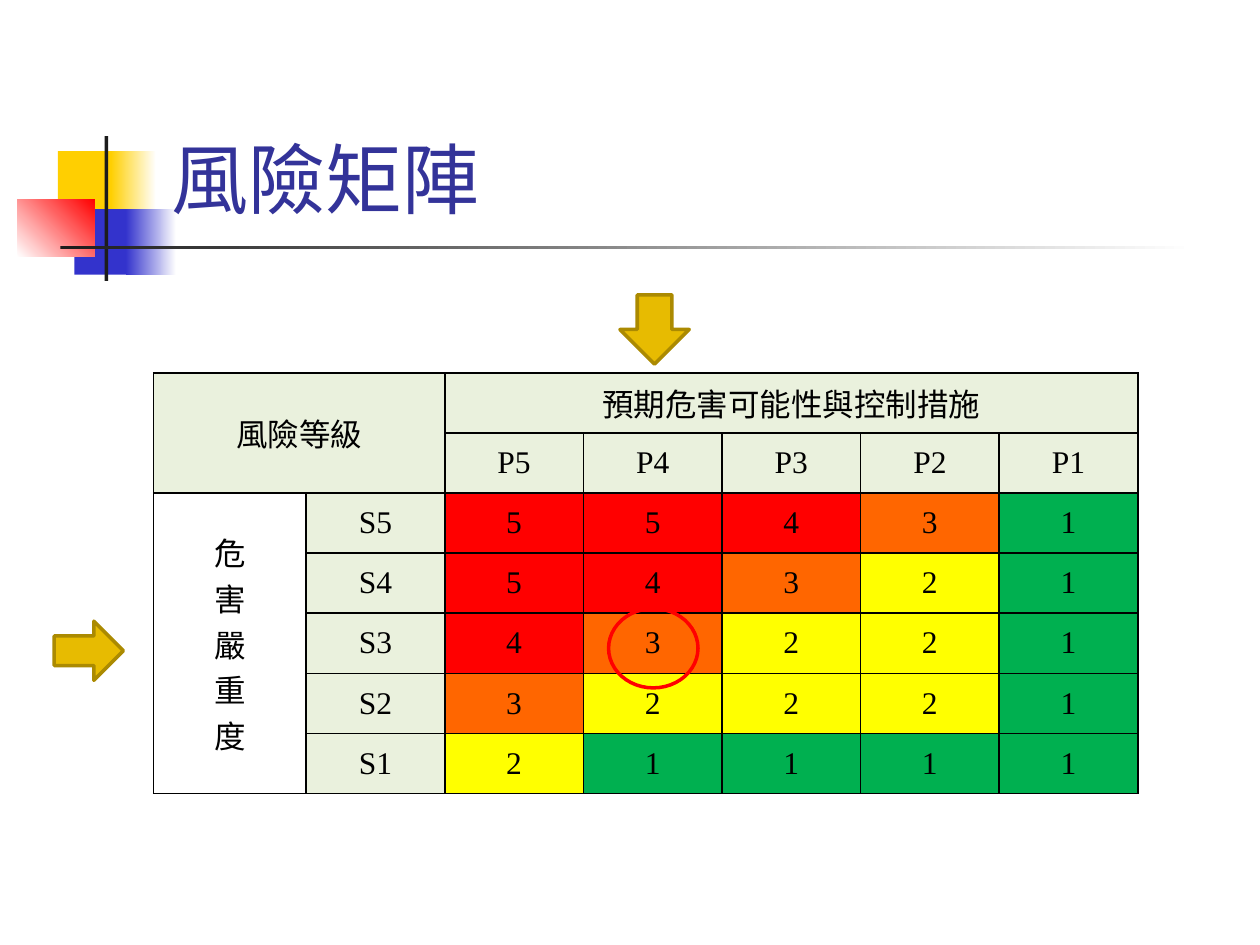
from lxml.etree import SubElement
from pptx import Presentation
from pptx.dml.color import RGBColor
from pptx.enum.shapes import MSO_SHAPE
from pptx.enum.text import MSO_ANCHOR, PP_ALIGN
from pptx.oxml.ns import qn
from pptx.util import Inches, Pt

FONT = "Times New Roman"
COLORS = {
    "title": "333399", "text": "000000", "white": "FFFFFF", "header": "EAF1DD",
    "yellow": "FFCF01", "blue": "3333CC", "red": "FF0000", "dark": "1C1C1C",
    "arrow": "E7BB01", "arrow_line": "AB8A01",
}
RISK_COLORS = {5: "FF0000", 4: "FF0000", 3: "FF6600", 2: "FFFF00", 1: "00B050"}

TITLE = "風險矩陣"
CORNER = "風險等級"
TOP_HEADER = "預期危害可能性與控制措施"
SIDE_HEADER = "危害嚴重度"
LIKELIHOODS = ["P5", "P4", "P3", "P2", "P1"]
RISKS = {
    "S5": [5, 5, 4, 3, 1],
    "S4": [5, 4, 3, 2, 1],
    "S3": [4, 3, 2, 2, 1],
    "S2": [3, 2, 2, 2, 1],
    "S1": [2, 1, 1, 1, 1],
}

# Box, first colour, second colour of a gradient, gradient angle
DECORATION = [
    ((0.46, 1.2, 0.48, 0.52), "yellow", None, 0),
    ((0.88, 1.2, 0.36, 0.52), "yellow", "white", 0),
    ((0.59, 1.66, 0.46, 0.52), "blue", None, 0),
    ((1, 1.66, 0.4, 0.52), "blue", "white", 0),
    ((0.14, 1.58, 0.61, 0.46), "white", "red", 45),
    ((0.83, 1.08, 0.03, 1.15), "dark", None, 0),
    ((0.48, 1.95, 9, 0.03), "dark", "white", 0),
]
# Shape, box, fill, line
MARKERS = [
    (MSO_SHAPE.DOWN_ARROW, (4.92, 2.34, 0.55, 0.55), "arrow", "arrow_line"),
    (MSO_SHAPE.RIGHT_ARROW, (0.43, 4.93, 0.55, 0.47), "arrow", "arrow_line"),
    (MSO_SHAPE.OVAL, (4.83, 4.83, 0.71, 0.63), None, "red"),
]


def rgb(name):
    return RGBColor.from_string(COLORS[name])


def add_shape(s, kind, box, fill, fill_end=None, angle=0, line=None):
    sp = s.shapes.add_shape(kind, *map(Inches, box))
    sp.shadow.inherit = False
    if fill is None:
        sp.fill.background()
    elif fill_end is None:
        sp.fill.solid()
        sp.fill.fore_color.rgb = rgb(fill)
    else:
        sp.fill.gradient()
        sp.fill.gradient_angle = angle
        for stop, position, name in zip(sp.fill.gradient_stops, (0, 1), (fill, fill_end)):
            stop.position = position
            stop.color.rgb = rgb(name)
    if line:
        sp.line.color.rgb = rgb(line)
        sp.line.width = Pt(2)
    else:
        sp.line.fill.background()


def add_borders(cell):
    tc_pr = cell._tc.get_or_add_tcPr()
    for i, side in enumerate(("a:lnL", "a:lnR", "a:lnT", "a:lnB")):
        ln = tc_pr.makeelement(qn(side), {"w": str(Pt(1))})
        SubElement(SubElement(ln, qn("a:solidFill")), qn("a:srgbClr"), val=COLORS["text"])
        tc_pr.insert(i, ln)


def set_cell(cell, text, fill=COLORS["header"]):
    cell.text = text
    cell.vertical_anchor = MSO_ANCHOR.MIDDLE
    cell.margin_left = cell.margin_right = Inches(0.07)
    cell.margin_top = cell.margin_bottom = 0
    for p in cell.text_frame.paragraphs:
        p.alignment = PP_ALIGN.CENTER
        p.font.name, p.font.size = FONT, Pt(18)
        p.font.color.rgb = rgb("text")
    if fill:
        cell.fill.solid()
        cell.fill.fore_color.rgb = RGBColor.from_string(fill)
    else:
        cell.fill.background()


prs = Presentation()
prs.slide_width, prs.slide_height = Inches(10), Inches(7.5)
s = prs.slides.add_slide(prs.slide_layouts[5])

# Corner decoration, placed behind the title
for box, fill, fill_end, angle in DECORATION:
    add_shape(s, MSO_SHAPE.RECTANGLE, box, fill, fill_end, angle)

# Title
title = s.shapes.title
title.left, title.top, title.width, title.height = map(Inches, (1.26, 0.23, 8.52, 1.6))
s.shapes._spTree.append(title._element)
tf = title.text_frame
tf.text = TITLE
tf.vertical_anchor = MSO_ANCHOR.BOTTOM
p = tf.paragraphs[0]
p.alignment = PP_ALIGN.LEFT
p.font.name, p.font.size = FONT, Pt(44)
p.font.color.rgb = rgb("title")

# Risk matrix
rows, cols = len(RISKS) + 2, len(LIKELIHOODS) + 2
table = s.shapes.add_table(rows, cols, Inches(1.22), Inches(2.96),
                           Inches(7.8), Inches(3.34)).table
table.first_row = table.horz_banding = False
for i, column in enumerate(table.columns):
    column.width = Inches(1.21 if i == 0 else 1.1)
for row in table.rows:
    row.height = Inches(3.34 / rows)

table.cell(0, 0).merge(table.cell(1, 1))
table.cell(0, 2).merge(table.cell(0, cols - 1))
table.cell(2, 0).merge(table.cell(rows - 1, 0))
set_cell(table.cell(0, 0), CORNER)
set_cell(table.cell(0, 2), TOP_HEADER)
set_cell(table.cell(2, 0), "\n".join(SIDE_HEADER), fill=None)
for c, label in enumerate(LIKELIHOODS, 2):
    set_cell(table.cell(1, c), label)
for r, (label, levels) in enumerate(RISKS.items(), 2):
    set_cell(table.cell(r, 1), label)
    for c, level in enumerate(levels, 2):
        set_cell(table.cell(r, c), str(level), RISK_COLORS[level])
for cell in table.iter_cells():
    add_borders(cell)

# Arrows and ring marking the chosen level
for kind, box, fill, line in MARKERS:
    add_shape(s, kind, box, fill, line=line)

prs.save("out.pptx")
